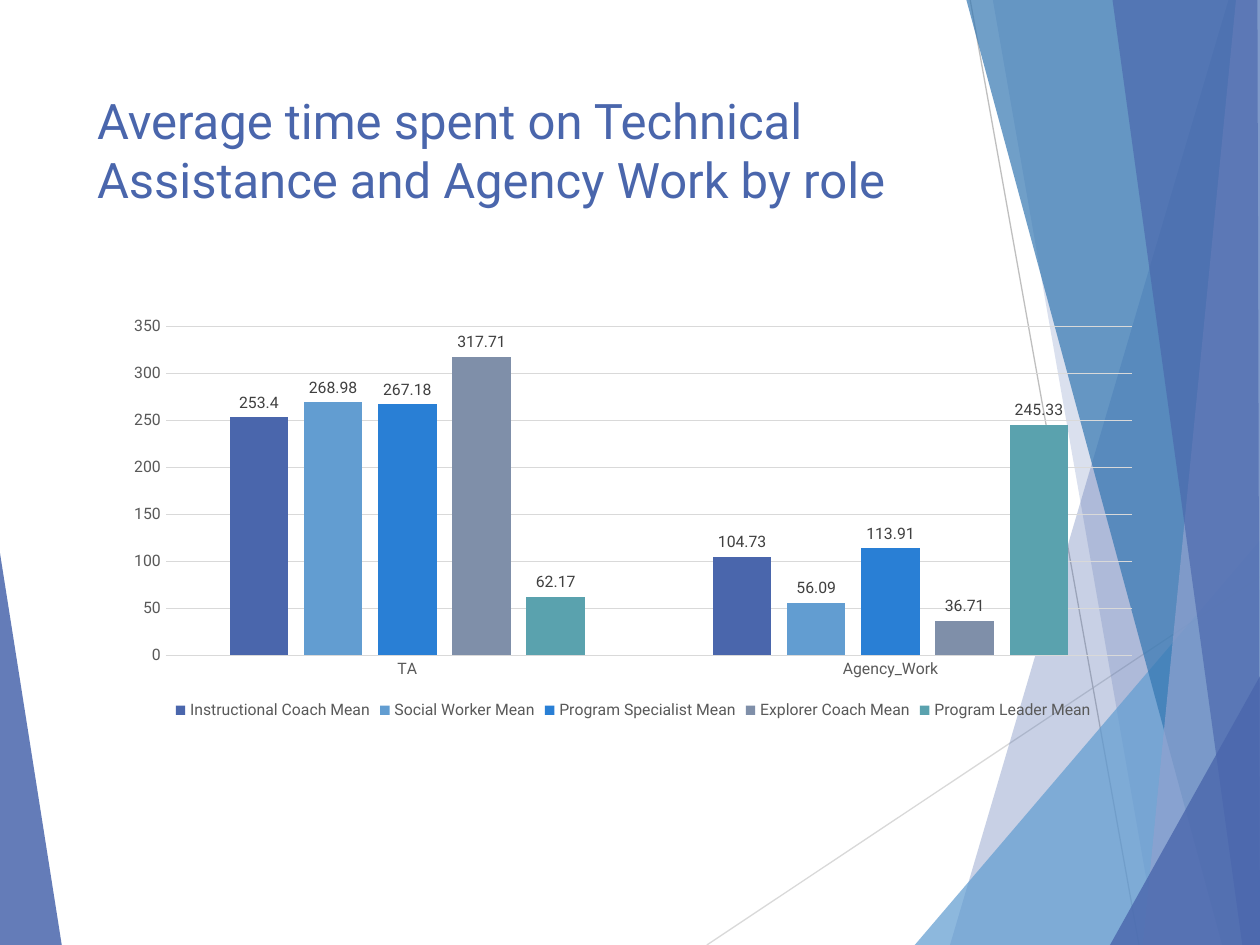
from lxml import etree
from pptx import Presentation
from pptx.chart.data import CategoryChartData
from pptx.dml.color import RGBColor
from pptx.enum.chart import XL_CHART_TYPE, XL_LABEL_POSITION, XL_LEGEND_POSITION, XL_TICK_MARK
from pptx.enum.shapes import MSO_CONNECTOR
from pptx.enum.text import MSO_ANCHOR, MSO_AUTO_SIZE, PP_ALIGN
from pptx.oxml.ns import qn
from pptx.util import Inches, Pt

# Content
TITLE = "Average time spent on Technical Assistance and Agency Work by role"
CATEGORIES = ["TA", "Agency_Work"]
ROLES = [
    ("Instructional Coach Mean", (253.4, 104.73), "indigo"),
    ("Social Worker Mean", (268.98, 56.09), "sky"),
    ("Program Specialist Mean", (267.18, 113.91), "blue"),
    ("Explorer Coach Mean", (317.71, 36.71), "slate"),
    ("Program Leader Mean", (62.17, 245.33), "teal"),
]

FONT = "Roboto"
COLORS = {
    "indigo": "4A66AC", "sky": "629DD1", "blue": "297FD5", "slate": "7F8FA9",
    "teal": "5AA2AE", "steel": "3477B2", "lavender": "90A2CF",
    "grid": "D9D9D9", "ray": "BFBFBF", "axis": "595959", "label": "404040",
}

# Background facets: color, opacity in percent, corner points in inches
LEFT_FACET = ("indigo", 85, [(0, 4.39), (0.49, 7.5), (0, 7.5)])
RAYS = [("grid", (5.61, 7.5), (10.01, 4.57)), ("ray", (7.7, 0), (9.04, 7.5))]
RIGHT_FACETS = [
    ("indigo", 30, [(9.75, 0), (7.54, 7.5), (10.01, 7.5), (10.01, 0)]),
    ("indigo", 20, [(7.88, 0), (9.19, 7.5), (10.01, 7.5), (10.01, 0)]),
    ("sky", 72, [(7.26, 7.5), (10, 4.29), (10.01, 7.5)]),
    ("steel", 70, [(7.67, 0), (9.7, 7.5), (10.01, 7.5), (10.01, 0)]),
    ("lavender", 70, [(9.81, 0), (9.07, 7.5), (10.01, 7.5), (10, 0)]),
    ("indigo", 65, [(8.83, 0), (9.86, 7.5), (10, 7.5), (9.98, 0)]),
    ("indigo", 80, [(8.81, 7.5), (10.01, 5.35), (10.01, 7.5)]),
]


def rgb(name):
    return RGBColor.from_string(COLORS[name])


def set_font(font, size, color):
    for attribute, value in {"name": FONT, "size": Pt(size), "bold": False}.items():
        setattr(font, attribute, value)
    font.color.rgb = rgb(color)


def set_line(line, color):
    line.color.rgb = rgb(color)
    line.width = Pt(0.75)


def add_facet(slide, color, opacity, points):
    corners = [(Inches(x), Inches(y)) for x, y in points]
    builder = slide.shapes.build_freeform(*corners[0])
    builder.add_line_segments(corners[1:], close=True)
    facet = builder.convert_to_shape()
    facet.shadow.inherit = False
    facet.fill.solid()
    facet.fill.fore_color.rgb = rgb(color)
    facet.line.fill.background()
    fill_color = facet.element.spPr.find(qn("a:solidFill"))[0]
    etree.SubElement(fill_color, qn("a:alpha")).set("val", str(opacity * 1000))


def add_ray(slide, color, start, end):
    ends = [Inches(value) for value in (*start, *end)]
    ray = slide.shapes.add_connector(MSO_CONNECTOR.STRAIGHT, *ends)
    set_line(ray.line, color)
    etree.SubElement(ray.element.spPr, qn("a:effectLst"))


def format_title(title):
    box = {"left": 0.67, "top": 0.67, "width": 6.94, "height": 1.44}
    for attribute, value in box.items():
        setattr(title, attribute, Inches(value))
    frame = title.text_frame
    frame.text = TITLE
    settings = {"word_wrap": True, "auto_size": MSO_AUTO_SIZE.NONE,
                "vertical_anchor": MSO_ANCHOR.TOP}
    for attribute, value in settings.items():
        setattr(frame, attribute, value)
    heading = frame.paragraphs[0]
    heading.alignment = PP_ALIGN.LEFT
    set_font(heading.runs[0].font, 28, "indigo")


def add_time_chart(slide):
    data = CategoryChartData()
    data.categories = CATEGORIES
    for role, minutes, _ in ROLES:
        data.add_series(role, minutes)
    place = [Inches(value) for value in (0.9, 2.45, 8.25, 3.3)]
    chart = slide.shapes.add_chart(XL_CHART_TYPE.COLUMN_CLUSTERED, *place, data).chart
    chart.has_title = False
    set_font(chart.font, 10, "axis")

    # Bars and their values
    plot = chart.plots[0]
    for attribute, value in {"gap_width": 219, "overlap": -27, "vary_by_categories": False}.items():
        setattr(plot, attribute, value)
    for series, (_, _, color) in zip(plot.series, ROLES):
        series.format.fill.solid()
        series.format.fill.fore_color.rgb = rgb(color)
        labels = series.data_labels
        labels.show_value = True
        labels.position = XL_LABEL_POSITION.OUTSIDE_END
        set_font(labels.font, 9, "label")

    # Axes and gridlines
    for axis in (chart.category_axis, chart.value_axis):
        axis.major_tick_mark = axis.minor_tick_mark = XL_TICK_MARK.NONE
        set_font(axis.tick_labels.font, 9, "axis")
    set_line(chart.category_axis.format.line, "grid")
    minutes_axis = chart.value_axis
    for attribute, value in {"minimum_scale": 0, "maximum_scale": 350, "major_unit": 50}.items():
        setattr(minutes_axis, attribute, value)
    minutes_axis.format.line.fill.background()
    set_line(minutes_axis.major_gridlines.format.line, "grid")

    # Legend
    chart.has_legend = True
    chart.legend.position = XL_LEGEND_POSITION.BOTTOM
    chart.legend.include_in_layout = False
    set_font(chart.legend.font, 9, "axis")


def main():
    deck = Presentation()
    deck.slide_width, deck.slide_height = Inches(10), Inches(7.5)
    slide = deck.slides.add_slide(deck.slide_layouts[5])

    add_facet(slide, *LEFT_FACET)
    for ray in RAYS:
        add_ray(slide, *ray)
    for facet in RIGHT_FACETS:
        add_facet(slide, *facet)
    format_title(slide.shapes.title)
    add_time_chart(slide)
    deck.save("out.pptx")


if __name__ == "__main__":
    main()
